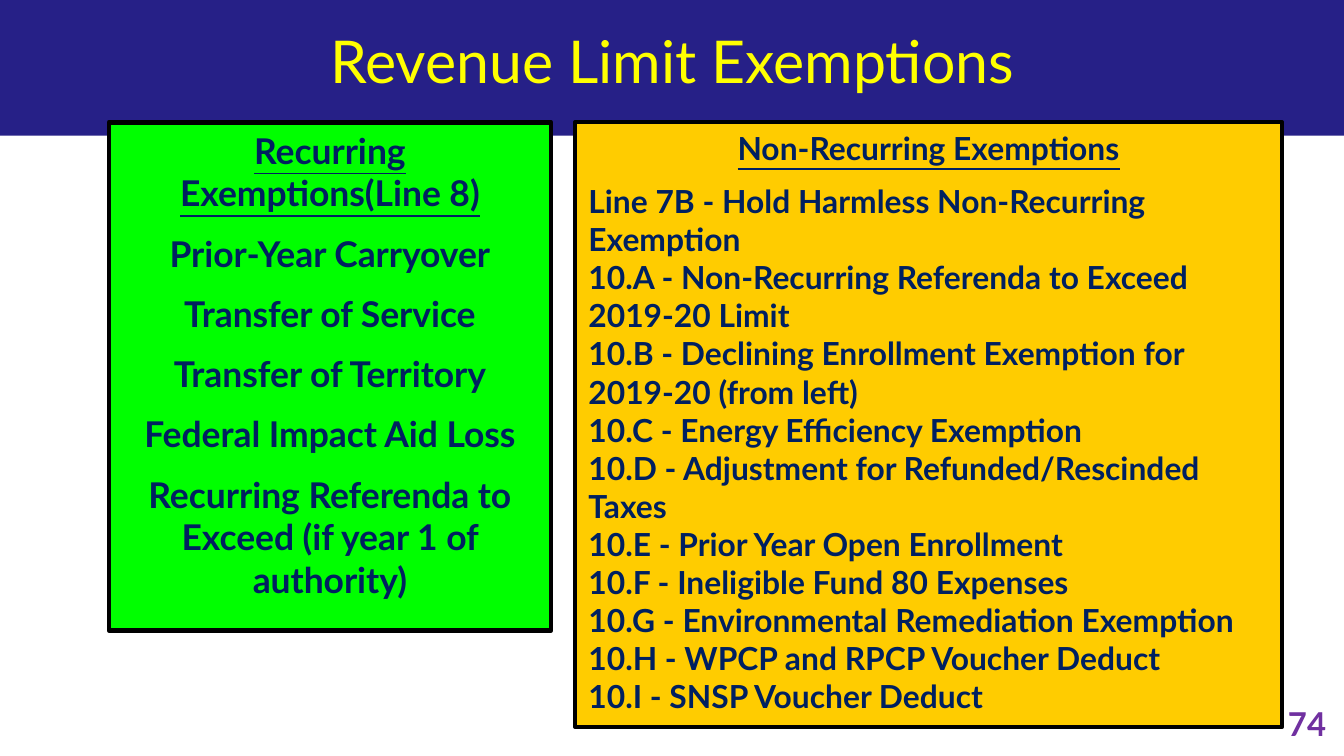
import pptx
import pptx.dml.color
import pptx.enum.shapes
import pptx.enum.text
import pptx.util

Inches, Pt = pptx.util.Inches, pptx.util.Pt
ALIGN = pptx.enum.text.PP_ALIGN
ANCHOR = pptx.enum.text.MSO_ANCHOR
RECTANGLE = pptx.enum.shapes.MSO_SHAPE.RECTANGLE

COLORS = {
    "band": "262087", "title": "FFFF00", "number": "7030A0", "ink": "002060",
    "border": "000000", "recurring": "00FF00", "non_recurring": "FFCC00",
}

# Content
TITLE = "Revenue Limit Exemptions"
PAGE_NUMBER = "74"
PANELS = [
    {
        "heading": "Recurring Exemptions(Line 8)",
        "items": [
            "Prior-Year Carryover",
            "Transfer of Service",
            "Transfer of Territory",
            "Federal Impact Aid Loss",
            "Recurring Referenda to Exceed (if year 1 of authority)",
        ],
        "box": (0.81, 0.91, 3.29, 3.78), "fill": "recurring", "border": 2.5,
        "size": 19, "align": ALIGN.CENTER, "first_gap": 9.5, "gap": 9.5,
    },
    {
        "heading": "Non-Recurring Exemptions",
        "items": [
            "Line 7B - Hold Harmless Non-Recurring Exemption",
            "10.A - Non-Recurring Referenda to Exceed 2019-20 Limit",
            "10.B - Declining Enrollment Exemption for 2019-20 (from left)",
            "10.C - Energy Efficiency Exemption",
            "10.D - Adjustment for Refunded/Rescinded Taxes",
            "10.E - Prior Year Open Enrollment",
            "10.F - Ineligible Fund 80 Expenses",
            "10.G - Environmental Remediation Exemption",
            "10.H - WPCP and RPCP Voucher Deduct",
            "10.I - SNSP Voucher Deduct",
        ],
        "box": (4.28, 0.91, 5.26, 4.5), "fill": "non_recurring", "border": 2.25,
        "size": 17, "align": ALIGN.LEFT, "first_gap": 8, "gap": 0,
    },
]


def rgb(name):
    return pptx.dml.color.RGBColor.from_string(COLORS[name])


def apply(target, values):
    for name, value in values.items():
        setattr(target, name, value)


def write(paragraph, text, color, font, layout):
    run = paragraph.add_run()
    run.text = text
    apply(paragraph, layout)
    apply(run.font, {"name": "Lato", **font})
    run.font.color.rgb = rgb(color)


def add_rectangle(slide, box, fill):
    rectangle = slide.shapes.add_shape(RECTANGLE, *map(Inches, box))
    rectangle.shadow.inherit = False
    rectangle.fill.solid()
    rectangle.fill.fore_color.rgb = rgb(fill)
    return rectangle


def add_panel(slide, panel):
    rectangle = add_rectangle(slide, panel["box"], panel["fill"])
    rectangle.line.color.rgb = rgb("border")
    rectangle.line.width = Pt(panel["border"])
    frame = rectangle.text_frame
    apply(frame, {"word_wrap": True, "vertical_anchor": ANCHOR.TOP})

    font = {"size": Pt(panel["size"]), "bold": True}
    write(frame.paragraphs[0], panel["heading"], "ink",
          {**font, "underline": True}, {"alignment": ALIGN.CENTER})
    for index, item in enumerate(panel["items"]):
        gap = panel["gap"] if index else panel["first_gap"]
        write(frame.add_paragraph(), item, "ink", font,
              {"alignment": panel["align"], "space_before": Pt(gap)})


def main():
    # Widescreen 16:9
    deck = pptx.Presentation()
    width = Inches(10)
    apply(deck, {"slide_width": width, "slide_height": width * 9 // 16})
    slide = deck.slides.add_slide(deck.slide_layouts[5])

    # Title on its band
    title = slide.shapes.title
    apply(title, {"left": Inches(0), "top": Inches(0.17),
                  "width": width, "height": Inches(0.62)})
    apply(title.text_frame, {"word_wrap": True, "vertical_anchor": ANCHOR.MIDDLE})
    write(title.text_frame.paragraphs[0], TITLE, "title", {"size": Pt(31.6)},
          {"alignment": ALIGN.CENTER, "line_spacing": 0.9})
    band = add_rectangle(slide, (-0.01, 0, 10.01, 1.01), "band")
    band.line.fill.background()
    title.element.addprevious(band.element)

    # Page number
    number = slide.shapes.add_textbox(*map(Inches, (9.43, 5.19, 0.59, 0.43)))
    number.text_frame.word_wrap = True
    write(number.text_frame.paragraphs[0], PAGE_NUMBER, "number",
          {"size": Pt(17.6), "bold": True}, {"alignment": ALIGN.CENTER})

    # Exemption panels
    for panel in PANELS:
        add_panel(slide, panel)

    deck.save("out.pptx")


if __name__ == "__main__":
    main()
